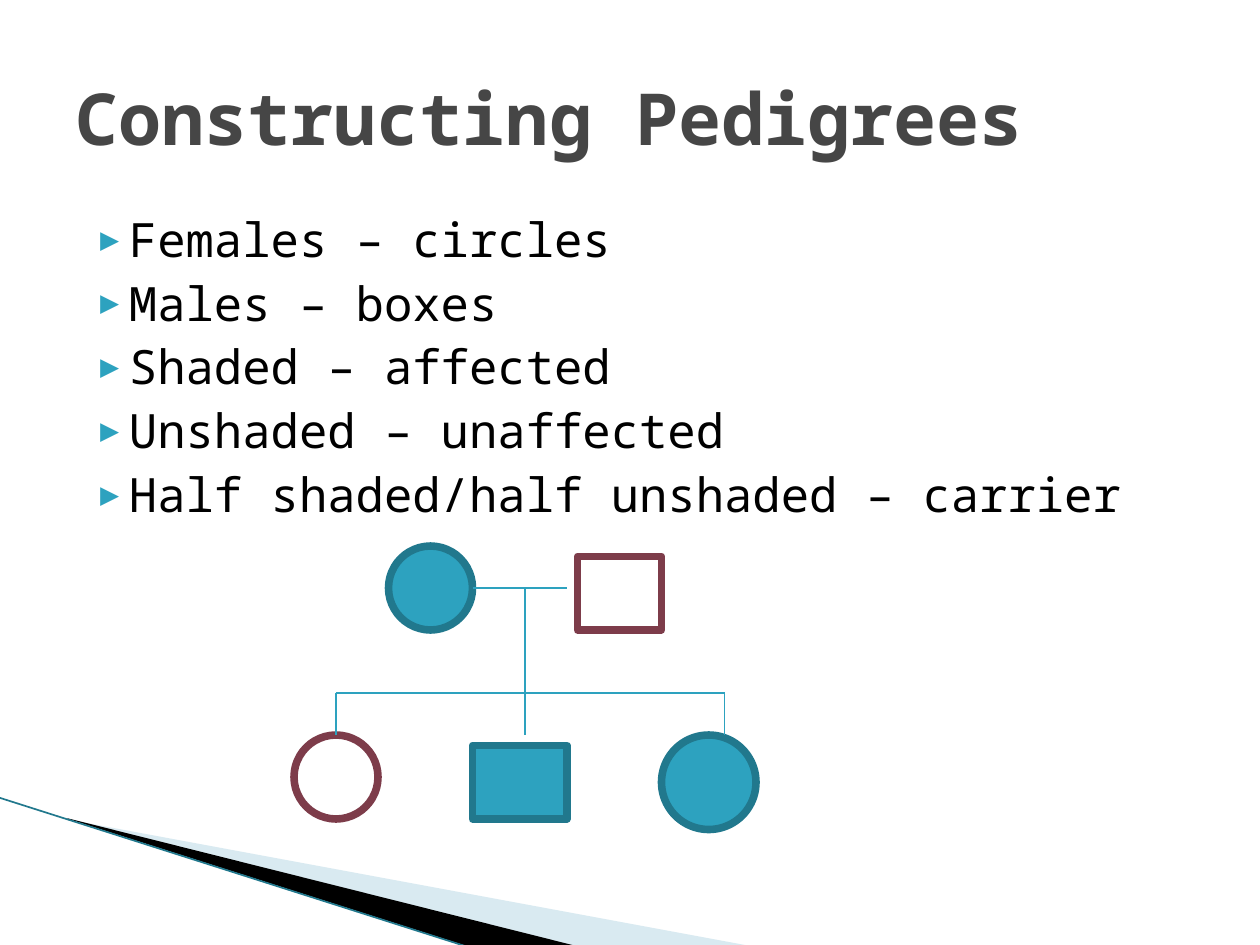
from lxml import etree
from pptx import Presentation
from pptx.dml.color import RGBColor
from pptx.enum.shapes import MSO_CONNECTOR, MSO_SHAPE
from pptx.enum.text import MSO_ANCHOR, PP_ALIGN
from pptx.oxml.ns import qn
from pptx.util import Pt

FONT = "Noto Sans Mono"
COLORS = {
    "teal": "2DA2BF", "teal_dark": "21788D", "plum": "7D3C4A",
    "mist": "A0CBDC", "title": "464646", "black": "000000", "white": "FFFFFF",
}


def rgb(name):
    return RGBColor.from_string(COLORS[name])


class PedigreeSlide:
    outline_width = 4.33
    line_width = 0.75

    def __init__(self, slide):
        self.slide = slide
        self.shapes = slide.shapes

    def style_font(self, paragraph, size, color, bold=False):
        font = paragraph.font
        font.name, font.size, font.bold = FONT, Pt(size), bold
        font.color.rgb = rgb(color)

    def title(self, text, left, top, width, height):
        title = self.shapes.title
        title.left, title.top, title.width, title.height = map(Pt, (left, top, width, height))
        frame = title.text_frame
        frame.text = text
        frame.vertical_anchor = MSO_ANCHOR.MIDDLE
        frame.paragraphs[0].alignment = PP_ALIGN.LEFT
        self.style_font(frame.paragraphs[0], 41, "title", bold=True)

    def bullets(self, items, left, top, width, height):
        frame = self.shapes.add_textbox(*map(Pt, (left, top, width, height))).text_frame
        frame.word_wrap = True
        frame.text = "\n".join(items)
        for index, paragraph in enumerate(frame.paragraphs):
            paragraph.space_before = Pt(4 if index else 0)
            self.add_bullet(paragraph)
            self.style_font(paragraph, 27, "black")

    def add_bullet(self, paragraph):
        props = paragraph._p.get_or_add_pPr()
        props.set("marL", str(Pt(28.8)))
        props.set("indent", str(-Pt(20.16)))
        color = etree.SubElement(props, qn("a:buClr"))
        etree.SubElement(color, qn("a:srgbClr"), val=COLORS["teal"])
        etree.SubElement(props, qn("a:buSzPct"), val="68000")
        etree.SubElement(props, qn("a:buFont"), typeface=FONT)
        etree.SubElement(props, qn("a:buChar"), char="▶")

    def person(self, female, affected, left, top, width, height):
        kind = MSO_SHAPE.OVAL if female else MSO_SHAPE.RECTANGLE
        symbol = self.shapes.add_shape(kind, *map(Pt, (left, top, width, height)))
        symbol.shadow.inherit = False
        symbol.fill.solid()
        symbol.fill.fore_color.rgb = rgb("teal" if affected else "white")
        symbol.line.color.rgb = rgb("teal_dark" if affected else "plum")
        symbol.line.width = Pt(self.outline_width)

    def line(self, x1, y1, x2, y2, color="teal", width=line_width):
        link = self.shapes.add_connector(MSO_CONNECTOR.STRAIGHT, *map(Pt, (x1, y1, x2, y2)))
        link.line.color.rgb = rgb(color)
        link.line.width = Pt(width)
        etree.SubElement(link._element.spPr, qn("a:effectLst"))

    def wedge(self, points, color, opacity=100):
        start, *rest = [(Pt(x), Pt(y)) for x, y in points]
        builder = self.shapes.build_freeform(*start)
        builder.add_line_segments(rest)
        wedge = builder.convert_to_shape()
        wedge.shadow.inherit = False
        wedge.fill.solid()
        wedge.fill.fore_color.rgb = rgb(color)
        wedge.line.fill.background()
        if opacity < 100:
            fill_color = wedge._element.spPr.find(".//" + qn("a:srgbClr"))
            etree.SubElement(fill_color, qn("a:alpha"), val=str(opacity * 1000))


def main():
    deck = Presentation()
    deck.slide_width, deck.slide_height = Pt(720), Pt(540)
    page = PedigreeSlide(deck.slides.add_slide(deck.slide_layouts[5]))

    page.wedge([(39.6, 468.5), (428.4, 540.5), (328.5, 540.5), (39.6, 468)], "mist", 40)
    page.wedge([(38.2, 467.5), (329, 540.5), (268, 541), (39, 468)], "black")
    page.line(-0.5, 455.8, 267, 541, "teal_dark", 0.95)

    page.title("Constructing Pedigrees", 36, 21.6, 648, 90)
    page.bullets([
        "Females – circles",
        "Males – boxes",
        "Shaded – affected",
        "Unshaded – unaffected",
        "Half shaded/half unshaded – carrier",
    ], 36, 116.6, 648, 356.4)

    # Parents
    page.person(True, True, 222, 312, 48, 48)
    page.person(False, False, 330, 318, 48, 42)

    # Children
    page.person(True, False, 168, 420, 48, 48)
    page.person(False, True, 270, 426, 54, 42)
    page.person(True, True, 378, 420, 54, 54)

    marriage_y, sibling_y, child_y = 336, 396, 420
    child_xs = (192, 300, 414)
    page.line(270, marriage_y, 324, marriage_y)
    page.line(child_xs[1], marriage_y, child_xs[1], sibling_y)
    page.line(child_xs[0], sibling_y, child_xs[-1], sibling_y)
    for x in child_xs:
        page.line(x, sibling_y, x, child_y)

    deck.save("out.pptx")


if __name__ == "__main__":
    main()
